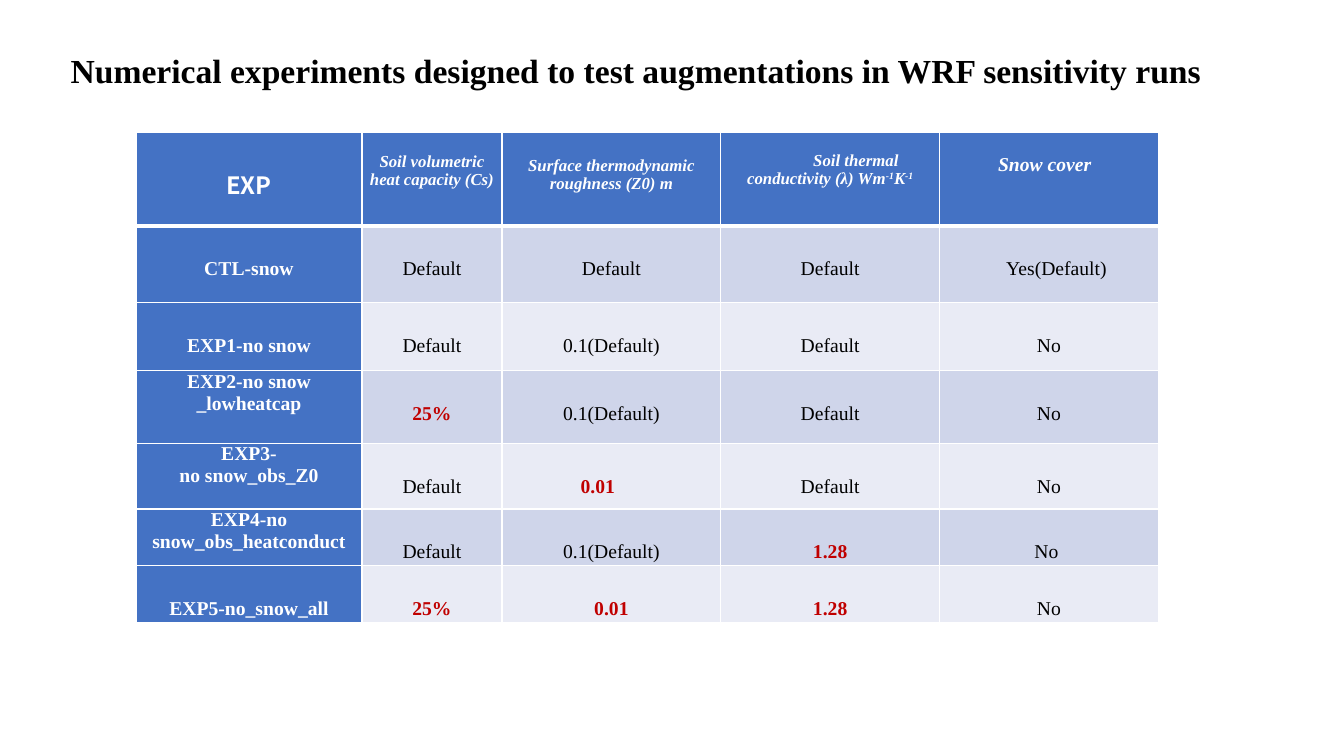
from pptx import Presentation
from pptx.dml.color import RGBColor
from pptx.enum.text import MSO_ANCHOR, PP_ALIGN
from pptx.oxml.ns import qn
from pptx.util import Inches, Pt
from lxml import etree

CENTER, LEFT, JUSTIFY = PP_ALIGN.CENTER, PP_ALIGN.LEFT, PP_ALIGN.JUSTIFY
TOP, MIDDLE = MSO_ANCHOR.TOP, MSO_ANCHOR.MIDDLE
SERIF, SANS = "Times New Roman", "Noto Sans CJK SC"
WHITE, BLACK, RED, BLUE = "FFFFFF", "000000", "C00000", "4472C4"
BANDS = ("E9EBF5", "CFD5EA")
INSET = 0.07

COLS = (2.24, 1.39, 2.17, 2.17, 2.17)
ROWS = (0.93, 0.76, 0.68, 0.72, 0.65, 0.56, 0.57)
HEADERS = (
    ("EXP", 0.34, {"size": 17, "font": SANS, "italic": False}),
    ("Soil volumetric heat capacity (Cs)", 0.2, {}),
    ("Surface thermodynamic roughness (Z0) m", 0.24, {}),
    ("Soil thermal conductivity (λ) Wm^-1^K^-1", 0.19, {"indent": 0.51}),
    ("Snow cover", 0.22, {"size": 14, "align": JUSTIFY, "indent": 0.51}),
)
EXPERIMENTS = (
    ("CTL-snow", "Default", "Default", "Default", "Yes(Default)"),
    ("EXP1-no snow", "Default", "0.1(Default)", "Default", "No"),
    ("EXP2-no snow _lowheatcap", "25%", "0.1(Default)", "Default", "No"),
    ("EXP3-\nno snow_obs_Z0", "Default", "0.01", "Default", "No"),
    ("EXP4-no snow_obs_heatconduct", "Default", "0.1(Default)", "1.28", "No"),
    ("EXP5-no_snow_all", "25%", "0.01", "1.28", "No"),
)
CHANGED = {"25%", "0.01", "1.28"}
TWO_LINE_ROWS = {3, 4, 5}
SHIFTS = {
    (1, 4): {"left": 0.22},
    (4, 2): {"align": LEFT, "indent": 0.71},
    (5, 4): {"right": 0.12},
}


def rgb(value):
    """Turn a hex string into a colour."""
    return RGBColor.from_string(value)


def write(tf, text, size=14, font=SERIF, color=BLACK, bold=False, italic=False,
          align=CENTER, spacing=1.0, indent=0):
    """Write one paragraph per line; pieces between carets are superscript."""
    tf.word_wrap = True
    for i, line in enumerate(text.split("\n")):
        p = tf.add_paragraph() if i else tf.paragraphs[0]
        p.alignment, p.line_spacing = align, spacing
        if indent:
            pPr = p._p.get_or_add_pPr()
            pPr.set("marL", "0")
            pPr.set("indent", str(Inches(indent)))
        for j, piece in enumerate(line.split("^")):
            if not piece:
                continue
            r = p.add_run()
            r.text = piece
            r.font.size, r.font.name = Pt(size), font
            r.font.bold, r.font.italic = bold, italic
            r.font.color.rgb = rgb(color)
            if j % 2:
                r._r.get_or_add_rPr().set("baseline", "30000")


def format_cell(cell, fill, bottom=1, top=0, left=INSET, right=INSET):
    """Set the white borders, fill and margins of a cell."""
    tcPr = cell._tc.get_or_add_tcPr()
    for side, width in (("L", 1), ("R", 1), ("T", 1), ("B", bottom)):
        ln = etree.SubElement(tcPr, qn("a:ln" + side), w=str(Pt(width)))
        paint = etree.SubElement(ln, qn("a:solidFill"))
        etree.SubElement(paint, qn("a:srgbClr"), val=WHITE)
    cell.fill.solid()
    cell.fill.fore_color.rgb = rgb(fill)
    cell.margin_left, cell.margin_right = Inches(left), Inches(right)
    cell.margin_top, cell.margin_bottom = Inches(top), 0
    cell.vertical_anchor = TOP


def add_title(slide, x, y, w, h):
    """Place the slide title in the given box."""
    sp = slide.shapes.title
    sp.left, sp.top, sp.width, sp.height = map(Inches, (x, y, w, h))
    sp.text_frame.vertical_anchor = MIDDLE
    write(sp.text_frame,
          "Numerical experiments designed to test augmentations in WRF sensitivity runs",
          size=24, bold=True, align=JUSTIFY, spacing=0.9)


def fill_header(table):
    """Fill the header row."""
    for c, (text, top, extra) in enumerate(HEADERS):
        cell = table.cell(0, c)
        format_cell(cell, BLUE, bottom=3, top=top)
        style = {"size": 12, "color": WHITE, "bold": True, "italic": True, **extra}
        write(cell.text_frame, text, **style)


def fill_experiments(table):
    """Fill one row per experiment, with changed values in red."""
    for r, values in enumerate(EXPERIMENTS, 1):
        for c, text in enumerate(values):
            cell = table.cell(r, c)
            shift = dict(SHIFTS.get((r, c), {}))
            margins = {k: shift.pop(k) for k in ("left", "right") if k in shift}
            format_cell(cell, BANDS[r % 2] if c else BLUE, **margins)
            color = WHITE if c == 0 else RED if text in CHANGED else BLACK
            spacing = 1.0 if c == 0 and r in TWO_LINE_ROWS else 2.5
            write(cell.text_frame, text, color=color, bold=color != BLACK,
                  spacing=spacing, **shift)


def add_experiment_table(slide, x, y):
    """Place the table of experiments with its corner at the given point."""
    box = map(Inches, (x, y, sum(COLS), sum(ROWS)))
    table = slide.shapes.add_table(len(ROWS), len(COLS), *box).table
    for column, width in zip(table.columns, COLS):
        column.width = Inches(width)
    for row, height in zip(table.rows, ROWS):
        row.height = Inches(height)
    fill_header(table)
    fill_experiments(table)


def main():
    """Build and save the slide."""
    prs = Presentation()
    prs.slide_width, prs.slide_height = Inches(13.33), Inches(7.5)
    slide = prs.slides.add_slide(prs.slide_layouts[5])
    add_title(slide, 0.6, 0, 12.73, 1.45)
    add_experiment_table(slide, 1.35, 1.31)
    prs.save("out.pptx")


if __name__ == "__main__":
    main()
